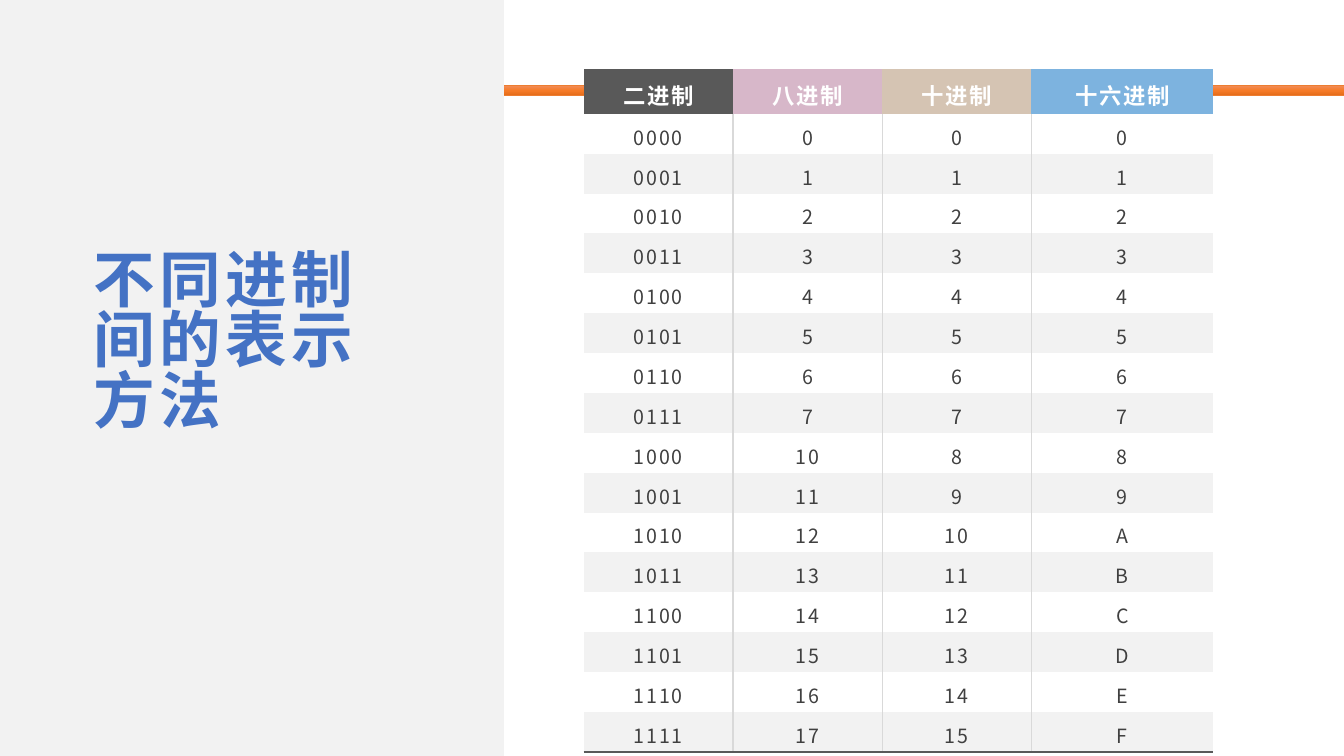
from copy import deepcopy

from lxml import etree
from pptx import Presentation
from pptx import util as u
from pptx.dml.color import RGBColor
from pptx.enum import shapes, text
from pptx.oxml import ns

WHITE = RGBColor(0xFF, 0xFF, 0xFF)
PALE_GRAY = RGBColor(0xF2, 0xF2, 0xF2)
RULE_GRAY = RGBColor(0xD9, 0xD9, 0xD9)
DARK_GRAY = RGBColor(0x59, 0x59, 0x59)
TEXT_GRAY = RGBColor(0x40, 0x40, 0x40)
BLUE = RGBColor(0x44, 0x72, 0xC4)
ORANGE = RGBColor(0xED, 0x7D, 0x31)
BAR_STOPS = [
    (0, RGBColor(0xF1, 0x8C, 0x57)),
    (0.5, RGBColor(0xF6, 0x7B, 0x28)),
    (1, RGBColor(0xE5, 0x6C, 0x19)),
]
# Heading, heading fill, column width in cm, number format
COLUMNS = [
    ("二进制", DARK_GRAY, 3.76, "04b"),
    ("八进制", RGBColor(0xD7, 0xB7, 0xC9), 3.76, "o"),
    ("十进制", RGBColor(0xD5, 0xC4, 0xB3), 3.76, "d"),
    ("十六进制", RGBColor(0x7D, 0xB3, 0xDF), 4.59, "X"),
]
NUMBERS = range(16)
PLAIN_TABLE_STYLE = "{2D5ABB26-0587-4C30-8999-92F81FD0307C}"


class SlideBuilder:
    font_name = "Noto Sans CJK SC"

    def __init__(self, presentation):
        self.slide = presentation.slides.add_slide(presentation.slide_layouts[5])

    def rectangle(self, left, top, width, height):
        shape = self.slide.shapes.add_shape(
            shapes.MSO_SHAPE.RECTANGLE,
            u.Cm(left), u.Cm(top), u.Cm(width), u.Cm(height))
        shape.shadow.inherit = False
        return shape

    def gradient_bar(self, left, top, width, height):
        shape = self.rectangle(left, top, width, height)
        shape.line.color.rgb = ORANGE
        shape.line.width = u.Pt(0.5)
        shape.fill.gradient()
        shape.fill.gradient_angle = 270
        stop_list = shape._element.spPr.find(".//" + ns.qn("a:gsLst"))
        stop_list.append(deepcopy(stop_list[-1]))
        for stop, (position, color) in zip(shape.fill.gradient_stops, BAR_STOPS):
            stop.position = position
            stop.color.rgb = color

    def panel(self, left, top, width, height):
        shape = self.rectangle(left, top, width, height)
        shape.fill.solid()
        shape.fill.fore_color.rgb = PALE_GRAY
        shape.line.fill.background()

    def run(self, paragraph, words, size, color, bold, spacing):
        run = paragraph.add_run()
        run.text = words
        run.font.size = u.Pt(size)
        run.font.bold = bold
        run.font.color.rgb = color
        run.font.name = self.font_name
        properties = run.font._element
        properties.set("spc", str(int(spacing * 100)))
        east_asian = etree.SubElement(properties, ns.qn("a:ea"))
        east_asian.set("typeface", self.font_name)

    def title(self, words, left, top, width, height):
        shape = self.slide.shapes.title
        shape.left, shape.top = u.Cm(left), u.Cm(top)
        shape.width, shape.height = u.Cm(width), u.Cm(height)
        frame = shape.text_frame
        frame.word_wrap = True
        frame.auto_size = text.MSO_AUTO_SIZE.NONE
        frame.vertical_anchor = text.MSO_ANCHOR.MIDDLE
        paragraph = frame.paragraphs[0]
        paragraph.alignment = text.PP_ALIGN.LEFT
        paragraph.line_spacing = 0.82
        self.run(paragraph, words, 44, BLUE, True, 3)
        # Bring the title in front of the panel
        self.slide.shapes._spTree.append(shape._element)

    def border(self, cell, side, color, width):
        properties = cell._tc.get_or_add_tcPr()
        line = etree.SubElement(properties, ns.qn("a:ln" + side), w=str(u.Pt(width)))
        fill = etree.SubElement(line, ns.qn("a:solidFill"))
        etree.SubElement(fill, ns.qn("a:srgbClr"), val=str(color))

    def cell(self, cell, words, fill, size, color, bold):
        cell.fill.solid()
        cell.fill.fore_color.rgb = fill
        cell.vertical_anchor = text.MSO_ANCHOR.MIDDLE
        cell.margin_left = cell.margin_right = u.Cm(0.48)
        cell.margin_top = cell.margin_bottom = u.Cm(0.07)
        paragraph = cell.text_frame.paragraphs[0]
        paragraph.alignment = text.PP_ALIGN.CENTER
        paragraph.line_spacing = 1.2
        self.run(paragraph, words, size, color, bold, 1.2)

    def number_table(self, left, top, header_height, row_height):
        width = sum(column[2] for column in COLUMNS)
        height = header_height + row_height * len(NUMBERS)
        table = self.slide.shapes.add_table(
            len(NUMBERS) + 1, len(COLUMNS),
            u.Cm(left), u.Cm(top), u.Cm(width), u.Cm(height)).table
        table.horz_banding = False
        table._tbl.tblPr.find(ns.qn("a:tableStyleId")).text = PLAIN_TABLE_STYLE
        for row in table.rows:
            row.height = u.Cm(row_height)
        table.rows[0].height = u.Cm(header_height)

        last_column = len(COLUMNS) - 1
        for index, (heading, fill, width, number_format) in enumerate(COLUMNS):
            table.columns[index].width = u.Cm(width)
            self.cell(table.cell(0, index), heading, fill, 16, WHITE, True)
            for number in NUMBERS:
                cell = table.cell(number + 1, index)
                if index > 0:
                    self.border(cell, "L", RULE_GRAY, 1 if index == 1 else 0.5)
                if index < last_column:
                    self.border(cell, "R", RULE_GRAY, 1 if index == 0 else 0.5)
                if number == NUMBERS[-1]:
                    self.border(cell, "B", DARK_GRAY, 1.5)
                band = PALE_GRAY if number % 2 else WHITE
                self.cell(cell, format(number, number_format), band, 14, TEXT_GRAY, False)


def main():
    presentation = Presentation()
    presentation.slide_width = u.Cm(33.87)
    presentation.slide_height = u.Cm(19.05)
    builder = SlideBuilder(presentation)

    # Background bar and side panel
    builder.gradient_bar(0, 2.16, 33.87, 0.25)
    builder.panel(0, 0, 12.7, 19.05)

    # Number systems
    builder.number_table(14.71, 1.75, 1.02, 0.91)

    # Title on the panel
    builder.title("不同进制间的表示方法", 2.11, 5.51, 8.46, 6.35)

    presentation.save("out.pptx")


if __name__ == "__main__":
    main()
